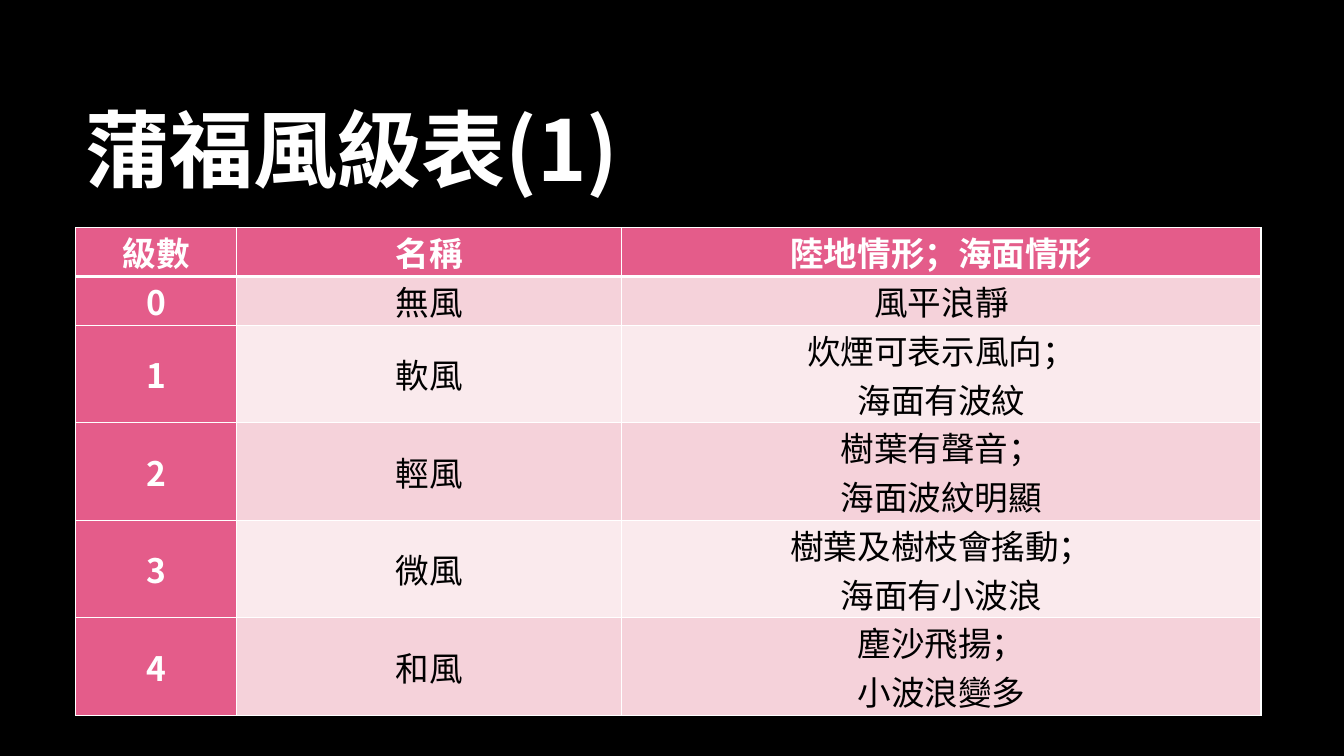
from pptx import Presentation
from pptx.dml.color import RGBColor
from pptx.enum.text import MSO_ANCHOR, MSO_AUTO_SIZE, PP_ALIGN
from pptx.oxml.ns import qn
from pptx.util import Pt
from lxml.etree import SubElement

FONT = "Noto Sans CJK SC"
WHITE, BLACK = "FFFFFF", "000000"
PINK, BANDS = "E45C8A", ("F5D2DA", "FAEAED")

HEADER = ("級數", "名稱", "陸地情形；海面情形")
WINDS = (
    ("0", "無風", "風平浪靜"),
    ("1", "軟風", "炊煙可表示風向；\n海面有波紋"),
    ("2", "輕風", "樹葉有聲音；\n海面波紋明顯"),
    ("3", "微風", "樹葉及樹枝會搖動；\n海面有小波浪"),
    ("4", "和風", "塵沙飛揚；\n小波浪變多"),
)
COL_WIDTHS = (115.2, 275, 456.5)
LINE_HEIGHT = 32.4


def rgb(value):
    return RGBColor.from_string(value)


def set_attrs(obj, values):
    for name, value in values.items():
        setattr(obj, name, value)


def write_text(tf, text, size, color, bold, align):
    tf.text = text
    for p in tf.paragraphs:
        p.alignment = align
        for r in p.runs:
            set_attrs(r.font, {"name": FONT, "size": Pt(size), "bold": bold})
            r.font.color.rgb = rgb(color)
            SubElement(r.font._element, qn("a:ea"), typeface=FONT)


def set_border(cell, side, color, width):
    tcPr = cell._tc.get_or_add_tcPr()
    ln = SubElement(tcPr, qn(f"a:ln{side}"), w=str(Pt(width)))
    fill = SubElement(ln, qn("a:solidFill"))
    SubElement(fill, qn("a:srgbClr"), val=color)


def add_title(s, text, left, top, width, height):
    sp = s.shapes.title
    set_attrs(sp, {"left": Pt(left), "top": Pt(top),
                   "width": Pt(width), "height": Pt(height)})
    set_attrs(sp.text_frame, {"word_wrap": True,
                              "auto_size": MSO_AUTO_SIZE.NONE,
                              "vertical_anchor": MSO_ANCHOR.MIDDLE})
    write_text(sp.text_frame, text, 60, WHITE, True, PP_ALIGN.LEFT)


def add_wind_table(s, left, top):
    rows = (HEADER,) + WINDS
    # Each row is as tall as its longest cell
    heights = [LINE_HEIGHT * (1 + max(t.count("\n") for t in row)) for row in rows]
    table = s.shapes.add_table(len(rows), len(HEADER), Pt(left), Pt(top),
                               Pt(sum(COL_WIDTHS)), Pt(sum(heights))).table
    for col, width in zip(table.columns, COL_WIDTHS):
        col.width = Pt(width)

    for i, row in enumerate(rows):
        table.rows[i].height = Pt(heights[i])
        for j, text in enumerate(row):
            cell = table.cell(i, j)
            strong = i == 0 or j == 0
            set_attrs(cell, {"margin_left": Pt(5.2), "margin_right": Pt(5.2),
                             "margin_top": 0, "margin_bottom": 0,
                             "vertical_anchor": MSO_ANCHOR.MIDDLE})
            # Thick rule between the header and the body
            thick = {0: "B", 1: "T"}.get(i)
            for side in "LRTB":
                set_border(cell, side, WHITE, 3 if side == thick else 1)
            cell.fill.solid()
            cell.fill.fore_color.rgb = rgb(PINK if strong else BANDS[(i - 1) % 2])
            write_text(cell.text_frame, text, 24, WHITE if strong else BLACK,
                       strong, PP_ALIGN.CENTER)


def main():
    prs = Presentation()
    set_attrs(prs, {"slide_width": Pt(960), "slide_height": Pt(540)})
    s = prs.slides.add_slide(prs.slide_layouts[5])

    # Background
    s.background.fill.solid()
    s.background.fill.fore_color.rgb = rgb(BLACK)

    # Title and wind scale
    add_title(s, "蒲福風級表(1)", 54, 48.2, 798, 114.5)
    add_wind_table(s, 54, 162.7)
    prs.save("out.pptx")


if __name__ == "__main__":
    main()
